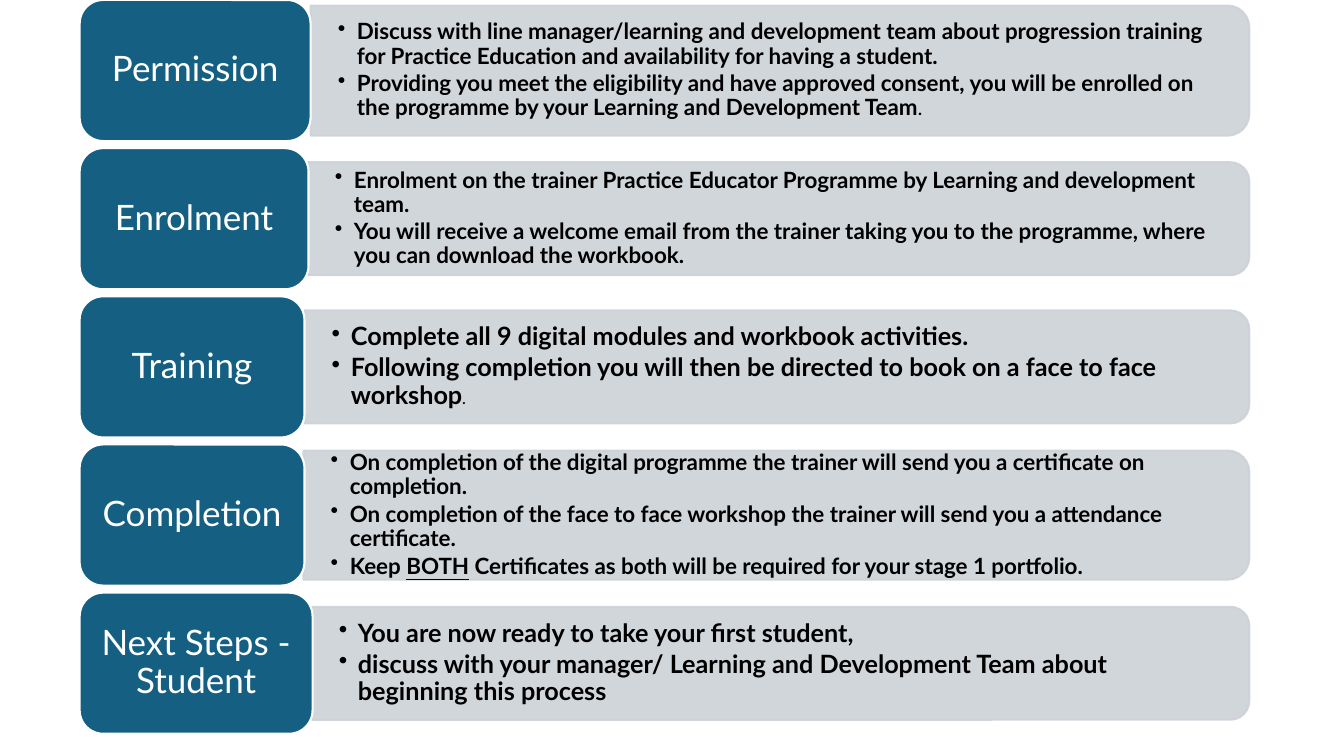
from dataclasses import dataclass

from lxml import etree
from pptx import Presentation
from pptx.dml.color import RGBColor
from pptx.enum import shapes, text
from pptx.oxml.ns import qn
from pptx.util import Inches, Pt


@dataclass(frozen=True)
class Theme:
    font: str = "Lato"
    blue: RGBColor = RGBColor(0x15, 0x60, 0x82)
    grey: RGBColor = RGBColor(0xCC, 0xD2, 0xD8)
    white: RGBColor = RGBColor(0xFF, 0xFF, 0xFF)
    black: RGBColor = RGBColor(0, 0, 0)
    alpha: int = 90000
    border: float = 1.5
    title: int = 25
    large: int = 18
    body: int = 16
    small: int = 12
    tiny: int = 10


@dataclass(frozen=True)
class Bit:
    words: str
    size: int = 0
    under: bool = False


@dataclass(frozen=True)
class Step:
    name: str
    width: float
    edge: float
    height: float
    size: int
    points: tuple[tuple[Bit, ...], ...]


THEME = Theme()
LEFT, RIGHT, PITCH, TALL = 0.79, 12.39, 1.47, 1.4
HANG = 0.19

STEPS = (
    Step("Permission", 2.29, 3.08, 1.29, THEME.body, (
        (Bit("Discuss with line manager/learning and development team about progression training "
             "for Practice Education and availability for having a student."),),
        (Bit("Providing you meet the eligibility and have approved consent, you will be enrolled on "
             "the programme by your Learning and Development Team"), Bit(".", THEME.small)),
    )),
    Step("Enrolment", 2.27, 3.05, 1.12, THEME.body, (
        (Bit("Enrolment on the trainer Practice Educator Programme by Learning and development "
             "team."),),
        (Bit("You will receive a welcome email from the trainer taking you to the programme, "
             "where you can download the workbook."),),
    )),
    Step("Training", 2.23, 3.02, 1.12, THEME.large, (
        (Bit("Complete all 9 digital modules and workbook activities."),),
        (Bit("Following completion you will then be directed to book on a face to face workshop"),
         Bit(".", THEME.tiny)),
    )),
    Step("Completion", 2.23, 3.01, 1.28, THEME.body, (
        (Bit("On completion of the digital programme the trainer will send you a certificate on "
             "completion."),),
        (Bit("On completion of the face to face workshop the trainer will send you a attendance "
             "certificate."),),
        (Bit("Keep "), Bit("BOTH", under=True),
         Bit(" Certificates as both will be required for your stage 1 portfolio.")),
    )),
    Step("Next Steps - Student", 2.31, 3.09, 1.12, THEME.large, (
        (Bit("You are now ready to take your first student,"),),
        (Bit("discuss with your manager/ Learning and Development Team about beginning this process"),),
    )),
)


def paint(shape, fill: RGBColor, line: RGBColor) -> None:
    shape.shadow.inherit = False
    shape.fill.solid()
    shape.fill.fore_color.rgb = fill
    shape.line.color.rgb = line
    shape.line.width = Pt(THEME.border)


def style(run, size: int, color: RGBColor) -> None:
    run.font.name = THEME.font
    run.font.size = Pt(size)
    run.font.color.rgb = color


def setup(frame, side: float, edge: float) -> None:
    frame.word_wrap = True
    frame.vertical_anchor = text.MSO_ANCHOR.MIDDLE
    frame.margin_left = frame.margin_right = Inches(side)
    frame.margin_top = frame.margin_bottom = Inches(edge)


def panel(slide, step: Step, mid: float) -> None:
    span = RIGHT - step.edge
    shape = slide.shapes.add_shape(
        shapes.MSO_SHAPE.ROUND_2_SAME_RECTANGLE,
        Inches((step.edge + RIGHT - step.height) / 2), Inches(mid - span / 2),
        Inches(step.height), Inches(span))
    shape.rotation = 90
    paint(shape, THEME.grey, THEME.grey)
    for color in shape._element.spPr.iter(qn("a:srgbClr")):
        etree.SubElement(color, qn("a:alpha"), val=str(THEME.alpha))


def bullet(para) -> None:
    props = para._p.get_or_add_pPr()
    props.set("marL", str(Inches(HANG)))
    props.set("indent", str(-Inches(HANG)))
    etree.SubElement(props, qn("a:buChar"), char="•")


def notes(slide, step: Step, mid: float) -> None:
    inset = 0.06
    tall = step.height - 2 * inset
    box = slide.shapes.add_textbox(
        Inches(step.edge), Inches(mid - tall / 2),
        Inches(RIGHT - inset - step.edge), Inches(tall))
    frame = box.text_frame
    setup(frame, 0.27, 0.14)
    frame.text = "\n".join(point[0].words for point in step.points)
    for para, point in zip(frame.paragraphs, step.points):
        bullet(para)
        para.line_spacing = 0.9
        para.space_after = Pt(0.15 * step.size)
        for bit in point[1:]:
            para.add_run().text = bit.words
        for run, bit in zip(para.runs, point):
            style(run, bit.size or step.size, THEME.black)
            run.font.bold = True
            run.font.underline = bit.under


def label(slide, step: Step, top: float) -> None:
    shape = slide.shapes.add_shape(
        shapes.MSO_SHAPE.ROUNDED_RECTANGLE,
        Inches(LEFT), Inches(top), Inches(step.width), Inches(TALL))
    paint(shape, THEME.blue, THEME.white)
    frame = shape.text_frame
    setup(frame, 0.1, 0.05)
    frame.text = step.name
    para = frame.paragraphs[0]
    para.alignment = text.PP_ALIGN.CENTER
    para.line_spacing = 0.9
    style(para.runs[0], THEME.title, THEME.white)


def main() -> None:
    deck = Presentation()
    deck.slide_width = Inches(13.33)
    deck.slide_height = Inches(7.5)
    slide = deck.slides.add_slide(deck.slide_layouts[6])
    for row, step in enumerate(STEPS):
        top = row * PITCH
        mid = top + TALL / 2
        panel(slide, step, mid)
        notes(slide, step, mid)
        label(slide, step, top)
    deck.save("out.pptx")


if __name__ == "__main__":
    main()
